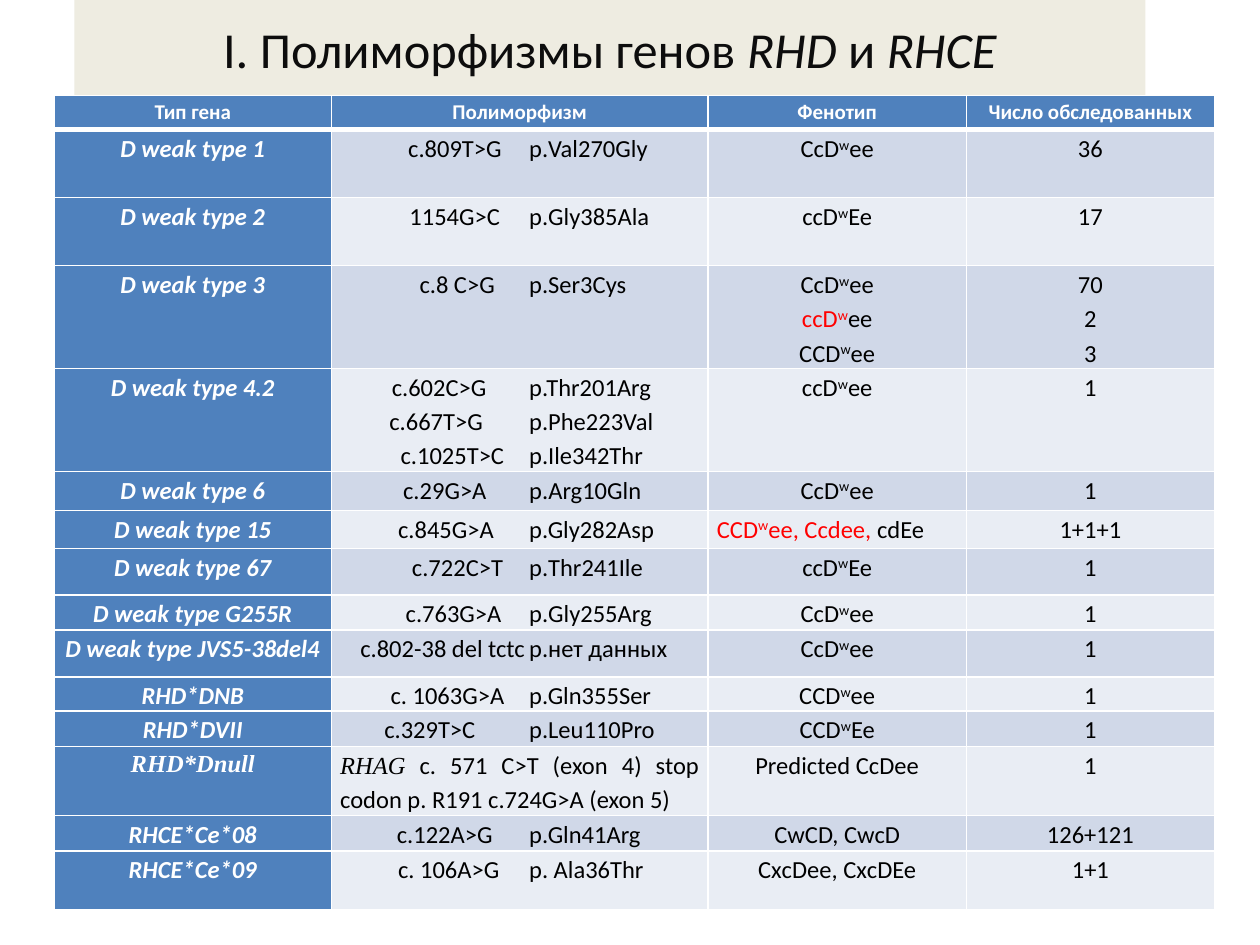
from lxml.etree import SubElement
from pptx import Presentation
from pptx.dml.color import RGBColor
from pptx.enum.text import MSO_ANCHOR, PP_ALIGN
from pptx.oxml.ns import qn
from pptx.util import Inches, Pt

WHITE = RGBColor(0xFF, 0xFF, 0xFF)
BLACK = RGBColor(0, 0, 0)
NEAR_BLACK = RGBColor(0x0D, 0x0D, 0x0D)
RED = RGBColor(0xFF, 0, 0)
BEIGE = RGBColor(0xEE, 0xEC, 0xE1)
BLUE = RGBColor(0x4F, 0x81, 0xBD)
BANDS = (RGBColor(0xD0, 0xD8, 0xE8), RGBColor(0xE9, 0xED, 0xF4))

TITLE = [("I. Полиморфизмы генов ", False), ("RHD ", True), ("и ", False), ("RHCE", True)]
HEADERS = ["Тип гена", "Полиморфизм", "Фенотип", "Число обследованных"]
COLUMN_WIDTHS = [2.2, 2.99, 2.05, 1.97]
HEADER_HEIGHT = 0.27

# Row: height, gene, [(start, DNA change, stop, protein change)], phenotypes, counts.
# In a phenotype, ^ raises the next letter and | ends the red part.
ROWS = [
    (0.54, "D weak type 1", [(0.54, "c.809T>G", 1.37, "р.Val270Gly")], ["CcD^wee"], ["36"]),
    (0.54, "D weak type 2", [(0.55, "1154G>C", 1.35, "р.Gly385Ala")], ["ccD^wEe"], ["17"]),
    (0.81, "D weak type 3", [(0.63, "c.8 C>G", 1.46, "р.Ser3Cys")],
     ["CcD^wee", "ccD^w|ee", "CCD^wee"], ["70", "2", "3"]),
    (0.81, "D weak type 4.2",
     [(0.41, "c.602C>G", 1.48, "p.Thr201Arg"),
      (0.39, "c.667T>G", 1.48, "p.Phe223Val"),
      (0.48, "c.1025T>C", 1.48, "p.Ile342Thr")], ["ccD^wee"], ["1"]),
    (0.31, "D weak type 6", [(0.5, "c.29G>A", 1.47, "p.Arg10Gln")], ["CcD^wee"], ["1"]),
    (0.3, "D weak type 15", [(0.46, "c.845G>A", 1.44, "p.Gly282Asp")],
     ["CCD^wee, Ccdee, |cdEe"], ["1+1+1"]),
    (0.37, "D weak type 67", [(0.57, "c.722C>T", 1.39, "р.Thr241Ile")], ["ccD^wEe"], ["1"]),
    (0.28, "D weak type G255R", [(0.52, "c.763G>A", 1.37, "р.Gly255Arg")], ["CcD^wee"], ["1"]),
    (0.37, "D weak type JVS5-38del4", [(0.16, "c.802-38 del tctc", 1.6, "p.нет данных")],
     ["CcD^wee"], ["1"]),
    (0.27, "RHD*DNB", [(0.4, "c. 1063G>A", 1.48, "p.Gln355Ser")], ["CCD^wee"], ["1"]),
    (0.28, "RHD*DVII", [(0.35, "c.329T>C", 1.47, "p.Leu110Pro")], ["CCD^wEe"], ["1"]),
    (0.55, "RHD*Dnull", [], ["Predicted CcDee"], ["1"]),
    (0.28, "RHCE*Ce*08", [(0.45, "c.122A>G", 1.52, "p.Gln41Arg")], ["СwСD, СwcD"], ["126+121"]),
    (0.47, "RHCE*Ce*09", [(0.46, "c. 106A>G", 1.44, "p. Ala36Thr")],
     ["CхcDee, CхcDEe"], ["1+1"]),
]
NULL_GENE = "RHD*Dnull"
NULL_CHANGE = " c. 571 C>T (exon 4) stop codon p. R191 c.724G>A (exon 5)"


def add_run(p, text, color=BLACK, size=14, bold=False, italic=False, name="Calibri"):
    """Add one formatted run and return it."""
    r = p.add_run()
    r.text = text
    r.font.size, r.font.bold, r.font.italic, r.font.name = Pt(size), bold, italic, name
    r.font.color.rgb = color
    return r


def add_paragraph(cell, index, align=PP_ALIGN.CENTER):
    """Return the cell's paragraph at this index, adding it if needed."""
    tf = cell.text_frame
    p = tf.add_paragraph() if index else tf.paragraphs[0]
    p.alignment, p.line_spacing = align, 1.15
    return p


def add_border(cell, side, width):
    """Draw a white line along one side of a cell."""
    ln = SubElement(cell._tc.get_or_add_tcPr(), qn(f"a:{side}"), w=str(Pt(width)))
    fill = SubElement(ln, qn("a:solidFill"))
    SubElement(fill, qn("a:srgbClr"), val=str(WHITE))


def style_cell(cell, color, bottom=1, top=1):
    """Set a cell's margins, borders and fill."""
    cell.margin_left = cell.margin_right = Inches(0.07)
    cell.margin_top = cell.margin_bottom = 0
    for side, width in (("lnL", 1), ("lnR", 1), ("lnT", top), ("lnB", bottom)):
        add_border(cell, side, width)
    cell.fill.solid()
    cell.fill.fore_color.rgb = color


def write_changes(cell, changes):
    """Write DNA and protein changes, set apart by an indent and a tab stop."""
    for i, (start, dna, stop, protein) in enumerate(changes):
        p = add_paragraph(cell, i, PP_ALIGN.LEFT)
        pPr = p._p.get_or_add_pPr()
        pPr.set("marL", "0")
        pPr.set("indent", str(Inches(start)))
        tabs = SubElement(pPr, qn("a:tabLst"))
        SubElement(tabs, qn("a:tab"), pos=str(Inches(stop)), algn="l")
        add_run(p, f"{dna}\t{protein}")


def write_phenotypes(cell, phenotypes):
    """Write phenotypes with raised letters and red parts."""
    for i, phenotype in enumerate(phenotypes):
        p = add_paragraph(cell, i, PP_ALIGN.JUSTIFY if ", |" in phenotype else PP_ALIGN.CENTER)
        red, _, black = phenotype.rpartition("|")
        for part, color in ((red, RED), (black, BLACK)):
            base, mark, rest = part.partition("^")
            if base:
                add_run(p, base, color)
            if mark:
                raised = add_run(p, rest[0], color)
                raised._r.get_or_add_rPr().set("baseline", "30000")
                if rest[1:]:
                    add_run(p, rest[1:], color)


def write_row(cells, gene, changes, phenotypes, counts):
    """Write the four cells of one gene."""
    is_null = gene == NULL_GENE
    add_run(add_paragraph(cells[0], 0), gene, WHITE, bold=True, italic=True,
            name="Times New Roman" if is_null else "Calibri")
    if is_null:
        p = add_paragraph(cells[1], 0, PP_ALIGN.JUSTIFY)
        add_run(p, "RHAG", italic=True, name="Times New Roman")
        add_run(p, NULL_CHANGE)
    write_changes(cells[1], changes)
    write_phenotypes(cells[2], phenotypes)
    for i, count in enumerate(counts):
        add_run(add_paragraph(cells[3], i), count)


def add_title(s):
    """Place and format the slide title."""
    sp = s.shapes.title
    sp.left, sp.top, sp.width, sp.height = Inches(0.59), 0, Inches(8.5), Inches(0.76)
    sp.fill.solid()
    sp.fill.fore_color.rgb = BEIGE
    tf = sp.text_frame
    tf.vertical_anchor = MSO_ANCHOR.MIDDLE
    p = tf.paragraphs[0]
    p.alignment = PP_ALIGN.CENTER
    for text, italic in TITLE:
        add_run(p, text, NEAR_BLACK, 28.8, italic=italic)


def add_gene_table(s):
    """Add the table of genes, polymorphisms and phenotypes."""
    heights = [HEADER_HEIGHT] + [row[0] for row in ROWS]
    table = s.shapes.add_table(len(heights), len(HEADERS), Inches(0.43), Inches(0.76),
                               Inches(sum(COLUMN_WIDTHS)), Inches(sum(heights))).table
    for column, width in zip(table.columns, COLUMN_WIDTHS):
        column.width = Inches(width)
    for row, height in zip(table.rows, heights):
        row.height = Inches(height)
    for cell, header in zip(table.rows[0].cells, HEADERS):
        style_cell(cell, BLUE, bottom=3)
        add_run(add_paragraph(cell, 0), header, WHITE, 12, bold=True)
    for i, (_, *content) in enumerate(ROWS):
        cells = list(table.rows[i + 1].cells)
        for j, cell in enumerate(cells):
            style_cell(cell, BANDS[i % 2] if j else BLUE, top=1 if i else 3)
        write_row(cells, *content)


def main():
    """Build and save the slide."""
    prs = Presentation()
    prs.slide_width, prs.slide_height = Inches(10), Inches(7.5)
    s = prs.slides.add_slide(prs.slide_layouts[5])
    add_title(s)
    add_gene_table(s)
    prs.save("out.pptx")


if __name__ == "__main__":
    main()
